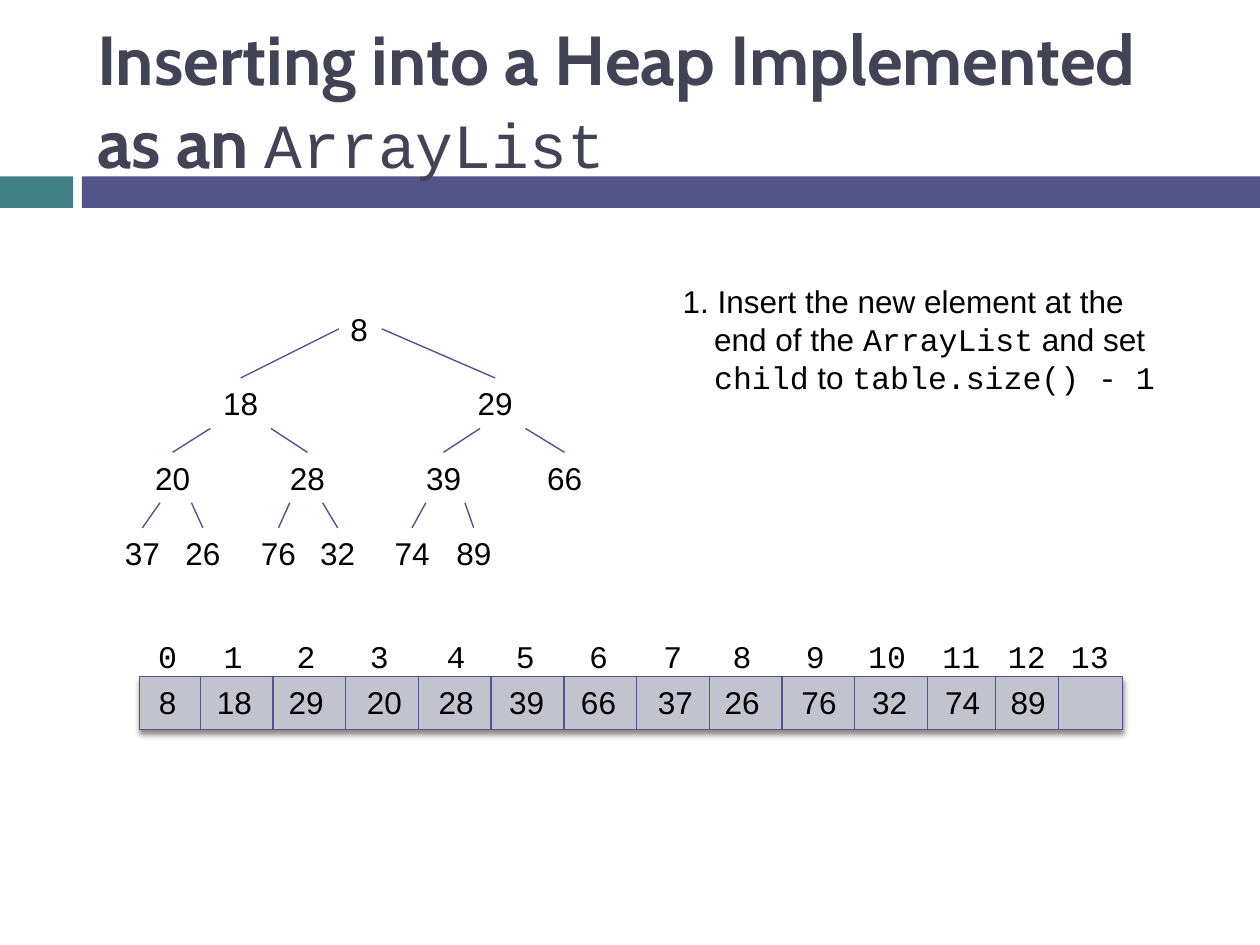
from lxml.etree import SubElement
from pptx import Presentation
from pptx.dml.color import RGBColor
from pptx.enum.shapes import MSO_CONNECTOR, MSO_SHAPE
from pptx.enum.text import MSO_ANCHOR, MSO_AUTO_SIZE, PP_ALIGN
from pptx.oxml import parse_xml
from pptx.oxml.ns import nsdecls, qn
from pptx.util import Inches, Pt

INDIGO, TEAL, SLATE, CELL, BLACK = "53548A", "438086", "424456", "C3C3CF", "000000"
SANS, MONO, HEADING = "Arial", "Courier New", "Cabin"

# Heap in array order: value, centre x, x where the edge leaves the parent
HEAP = [
    ("8", 2.85, None),
    ("18", 1.91, 2.69), ("29", 3.93, 3.03),
    ("20", 1.37, 1.67), ("28", 2.44, 2.15), ("39", 3.52, 3.81), ("66", 4.48, 4.17),
    ("37", 1.13, 1.27), ("26", 1.61, 1.52), ("76", 2.21, 2.3),
    ("32", 2.68, 2.56), ("74", 3.27, 3.38), ("89", 3.76, 3.69),
]
LEVEL_TOPS = [2.41, 3, 3.59, 4.19]
LABEL_HEIGHT = 0.4

# Array strip: eleven equal dividers, then two narrower cells
ARRAY_LEFT, ARRAY_TOP, ARRAY_WIDTH, ARRAY_HEIGHT = 1.11, 5.37, 7.8, 0.42
DIVIDERS = [1.59 + 0.577 * i for i in range(11)] + [7.9, 8.4]
INDEX_CENTRES = [1.33, 1.85, 2.43, 3.01, 3.62, 4.17, 4.75,
                 5.34, 5.89, 6.47, 7.04, 7.63, 8.15, 8.65]
VALUE_CENTRES = [1.33, 1.86, 2.43, 3.05, 3.62, 4.18, 4.75,
                 5.36, 5.89, 6.5, 7.06, 7.64, 8.16]


def color(hex_string):
    return RGBColor.from_string(hex_string)


def add_run(paragraph, text, font, size=18, hex_string=BLACK, bold=False):
    run = paragraph.add_run()
    run.text = text
    run.font.name = font
    run.font.size = Pt(size)
    run.font.bold = bold
    run.font.color.rgb = color(hex_string)


def add_box(shapes, left, top, width, height, fill, line=None):
    box = shapes.add_shape(MSO_SHAPE.RECTANGLE, Inches(left), Inches(top),
                           Inches(width), Inches(height))
    box.shadow.inherit = False
    box.fill.solid()
    box.fill.fore_color.rgb = color(fill)
    if line:
        box.line.color.rgb = color(line)
        box.line.width = Pt(0.79)
    else:
        box.line.fill.background()
    return box


def add_shadow(box):
    effects = box.element.spPr.find(qn("a:effectLst"))
    effects.append(parse_xml(
        f'<a:outerShdw {nsdecls("a")} blurRad="{Pt(3)}" dist="{Pt(2.4)}" dir="5400000" '
        'rotWithShape="0"><a:srgbClr val="000000"><a:alpha val="45000"/></a:srgbClr>'
        '</a:outerShdw>'))


def add_line(shapes, x1, y1, x2, y2):
    line = shapes.add_connector(MSO_CONNECTOR.STRAIGHT, Inches(x1), Inches(y1),
                                Inches(x2), Inches(y2))
    line.line.color.rgb = color(INDIGO)
    line.line.width = Pt(0.79)
    SubElement(line.element.spPr, qn("a:effectLst"))


def add_label(shapes, text, centre, top, font=SANS, width=0.48):
    label = shapes.add_textbox(Inches(centre - width / 2), Inches(top),
                               Inches(width), Inches(LABEL_HEIGHT))
    frame = label.text_frame
    frame.word_wrap = False
    frame.auto_size = MSO_AUTO_SIZE.SHAPE_TO_FIT_TEXT
    frame.paragraphs[0].alignment = PP_ALIGN.CENTER
    add_run(frame.paragraphs[0], text, font)


def add_heading(slide):
    add_box(slide.shapes, 0, 1.4, 0.58, 0.25, TEAL)
    add_box(slide.shapes, 0.65, 1.4, 9.35, 0.25, INDIGO)
    title = slide.shapes.title
    title.element.getparent().append(title.element)  # in front of the bars
    title.left, title.top = Inches(0.67), Inches(0.25)
    title.width, title.height = Inches(8.92), Inches(1.08)
    frame = title.text_frame
    frame.word_wrap = True
    frame.auto_size = MSO_AUTO_SIZE.NONE
    frame.vertical_anchor = MSO_ANCHOR.MIDDLE
    paragraph = frame.paragraphs[0]
    paragraph.alignment = PP_ALIGN.LEFT
    add_run(paragraph, "Inserting into a Heap Implemented as an ", HEADING, 39.6, SLATE, True)
    add_run(paragraph, "ArrayList", MONO, 36, SLATE)


def add_tree(shapes):
    for index, (value, centre, edge_start) in enumerate(HEAP):
        level = (index + 1).bit_length() - 1
        top = LEVEL_TOPS[level]
        add_label(shapes, value, centre, top)
        if index:
            # Edges leave the root at mid height, other nodes at the bottom
            drop = LABEL_HEIGHT / 2 if level == 1 else LABEL_HEIGHT
            add_line(shapes, edge_start, LEVEL_TOPS[level - 1] + drop, centre, top)


def add_array(shapes):
    strip = add_box(shapes, ARRAY_LEFT, ARRAY_TOP, ARRAY_WIDTH, ARRAY_HEIGHT, CELL, INDIGO)
    add_shadow(strip)
    for x in DIVIDERS:
        add_line(shapes, x, ARRAY_TOP, x, ARRAY_TOP + ARRAY_HEIGHT)
    for index, centre in enumerate(INDEX_CENTRES):
        add_label(shapes, str(index), centre, ARRAY_TOP - 0.36, MONO, 0.54)
    for (value, _, _), centre in zip(HEAP, VALUE_CENTRES):
        add_label(shapes, value, centre, ARRAY_TOP)


def add_step(shapes):
    step = shapes.add_textbox(Inches(5.32), Inches(2.19), Inches(4.16), Inches(1.01))
    frame = step.text_frame
    frame.word_wrap = True
    frame.auto_size = MSO_AUTO_SIZE.SHAPE_TO_FIT_TEXT
    paragraph = frame.paragraphs[0]
    properties = paragraph._p.get_or_add_pPr()
    properties.set("marL", str(Inches(0.25)))
    properties.set("indent", str(Inches(-0.25)))
    for text, font in [("1. Insert the new element at the end of the ", SANS),
                       ("ArrayList", MONO), (" and set ", SANS), ("child", MONO),
                       (" to ", SANS), ("table.size() - 1", MONO)]:
        add_run(paragraph, text, font)


def main():
    presentation = Presentation()
    presentation.slide_width, presentation.slide_height = Inches(10), Inches(7.5)
    slide = presentation.slides.add_slide(presentation.slide_layouts.get_by_name("Title Only"))
    add_heading(slide)
    add_tree(slide.shapes.add_group_shape().shapes)
    add_array(slide.shapes.add_group_shape().shapes)
    add_step(slide.shapes)
    presentation.save("out.pptx")


if __name__ == "__main__":
    main()
